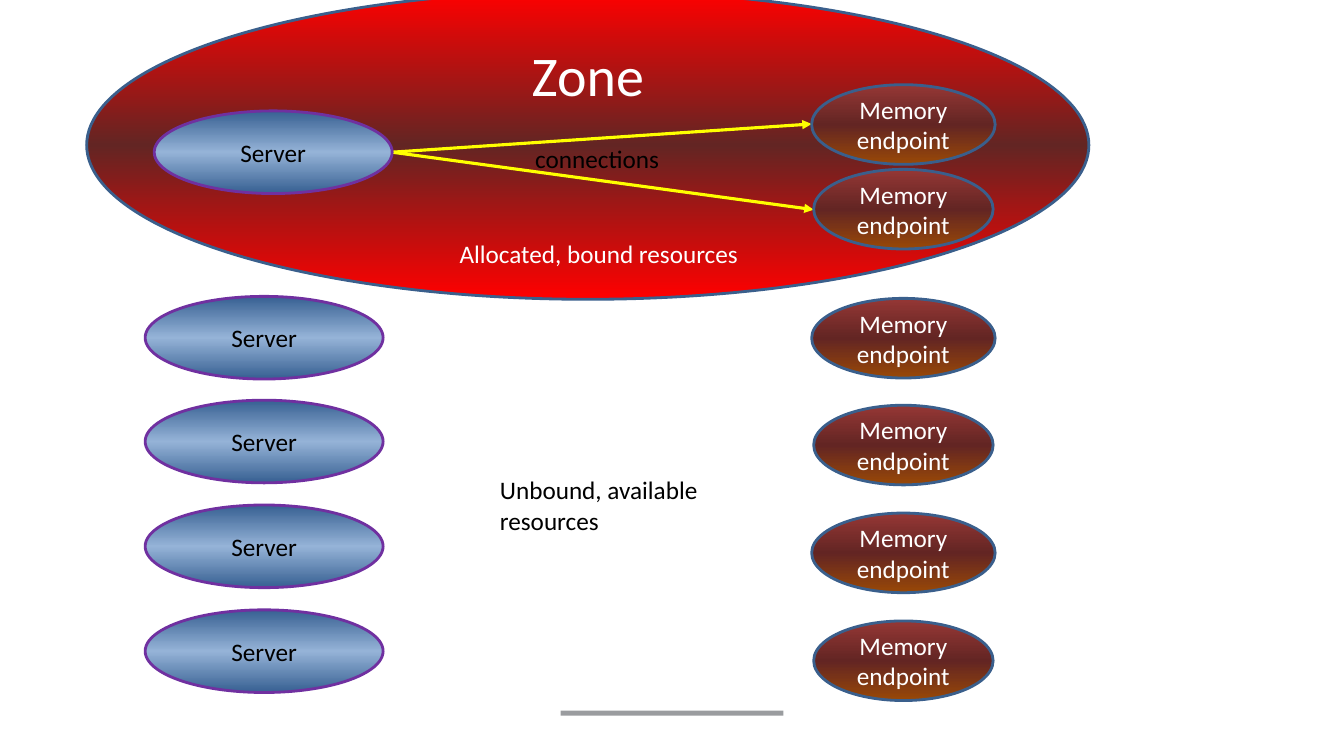
import copy

import pptx
import pptx.dml.color
import pptx.enum.shapes
import pptx.enum.text
import pptx.oxml
import pptx.oxml.ns
import pptx.util

PX = 9144  # EMU per px, 100 px to the inch
FONT = "Calibri"

RGBColor = pptx.dml.color.RGBColor
WHITE = RGBColor(0xFF, 0xFF, 0xFF)
BLACK = RGBColor(0x00, 0x00, 0x00)
GREY = RGBColor(0x9A, 0x9C, 0x9F)
YELLOW = RGBColor(0xFF, 0xFF, 0x00)
RED = RGBColor(0xFF, 0x00, 0x00)
MAROON = RGBColor(0x63, 0x25, 0x23)
BRICK = RGBColor(0x95, 0x37, 0x35)
BROWN = RGBColor(0x98, 0x48, 0x07)
DARK_BLUE = RGBColor(0x37, 0x60, 0x92)
LIGHT_BLUE = RGBColor(0x95, 0xB3, 0xD7)
OUTLINE_BLUE = RGBColor(0x3A, 0x5F, 0x8C)
PURPLE = RGBColor(0x70, 0x30, 0xA0)

SERVER_STYLE = ((DARK_BLUE, LIGHT_BLUE, DARK_BLUE), PURPLE, BLACK)
MEMORY_STYLE = ((BRICK, MAROON, BROWN), OUTLINE_BLUE, WHITE)
ZONE_STYLE = ((RED, MAROON, RED), OUTLINE_BLUE, WHITE)

presentation = pptx.Presentation()
presentation.slide_width = 1333 * PX
presentation.slide_height = 750 * PX
slide = presentation.slides.add_slide(presentation.slide_layouts[6])


def write_text(shape, text, size, color, alignment):
    shape.text_frame.text = text
    for paragraph in shape.text_frame.paragraphs:
        paragraph.alignment = alignment
        for run in paragraph.runs:
            run.font.name = FONT
            run.font.size = pptx.util.Pt(size)
            run.font.color.rgb = color


def add_ellipse(box, text, style, size=18):
    gradient, outline, text_color = style
    shape = slide.shapes.add_shape(
        pptx.enum.shapes.MSO_SHAPE.OVAL, *(length * PX for length in box))
    shape.shadow.inherit = False
    shape.fill.gradient()
    shape.fill.gradient_angle = 270
    # The default gradient has two stops; a third goes in the middle
    stop_list = shape._element.spPr.find(".//" + pptx.oxml.ns.qn("a:gsLst"))
    stop_list.insert(1, copy.deepcopy(stop_list[0]))
    for index, stop in enumerate(shape.fill.gradient_stops):
        stop.position = index / 2
        stop.color.rgb = gradient[index]
    shape.line.color.rgb = outline
    shape.line.width = pptx.util.Pt(2)
    write_text(shape, text, size, text_color, pptx.enum.text.PP_ALIGN.CENTER)
    return shape


# Footer bar
bar = slide.shapes.add_shape(
    pptx.enum.shapes.MSO_SHAPE.RECTANGLE, 556 * PX, 705 * PX, 221 * PX, 5 * PX)
bar.shadow.inherit = False
bar.fill.solid()
bar.fill.fore_color.rgb = GREY
bar.line.fill.background()

# Zone
zone = add_ellipse((86, -9, 994, 306), "Zone", ZONE_STYLE, 40)
zone.text_frame.vertical_anchor = pptx.enum.text.MSO_ANCHOR.TOP

# Connections from the bound server to its two memory endpoints
for end_x, end_y in ((805, 123), (807, 208)):
    connector = slide.shapes.add_connector(
        pptx.enum.shapes.MSO_CONNECTOR.STRAIGHT,
        389 * PX, 151 * PX, end_x * PX, end_y * PX)
    connector.line.color.rgb = YELLOW
    connector.line.width = pptx.util.Pt(2.25)
    arrowhead = pptx.oxml.parse_xml(
        f'<a:tailEnd {pptx.oxml.ns.nsdecls("a")} type="triangle"/>')
    connector.line._get_or_add_ln().append(arrowhead)
    connector._element.spPr.append(
        pptx.oxml.parse_xml(f'<a:effectLst {pptx.oxml.ns.nsdecls("a")}/>'))

# Servers: one bound in the zone, four available below
add_ellipse((153, 110, 236, 82), "Server", SERVER_STYLE)
for row in range(4):
    add_ellipse((144, 294 + 311 * row // 3, 236, 82), "Server", SERVER_STYLE)

# Memory endpoints: two bound, four available, alternating in width
memory_tops = [84, 168] + [296 + 320 * row // 3 for row in range(4)]
for index, top in enumerate(memory_tops):
    inset = 2 * (index % 2)
    add_ellipse((805 + inset, top, 182 - 2 * inset, 79),
                "Memory\nendpoint", MEMORY_STYLE)

# Labels
for left, top, width, height, text, color in (
    (521, 137, 145, 40, "connections", BLACK),
    (446, 232, 300, 40, "Allocated, bound resources", WHITE),
    (486, 466, 219, 71, "Unbound, available\nresources", BLACK),
):
    label = slide.shapes.add_textbox(left * PX, top * PX, width * PX, height * PX)
    label.text_frame.word_wrap = False
    label.text_frame.auto_size = pptx.enum.text.MSO_AUTO_SIZE.SHAPE_TO_FIT_TEXT
    write_text(label, text, 18, color, pptx.enum.text.PP_ALIGN.LEFT)

presentation.save("out.pptx")
